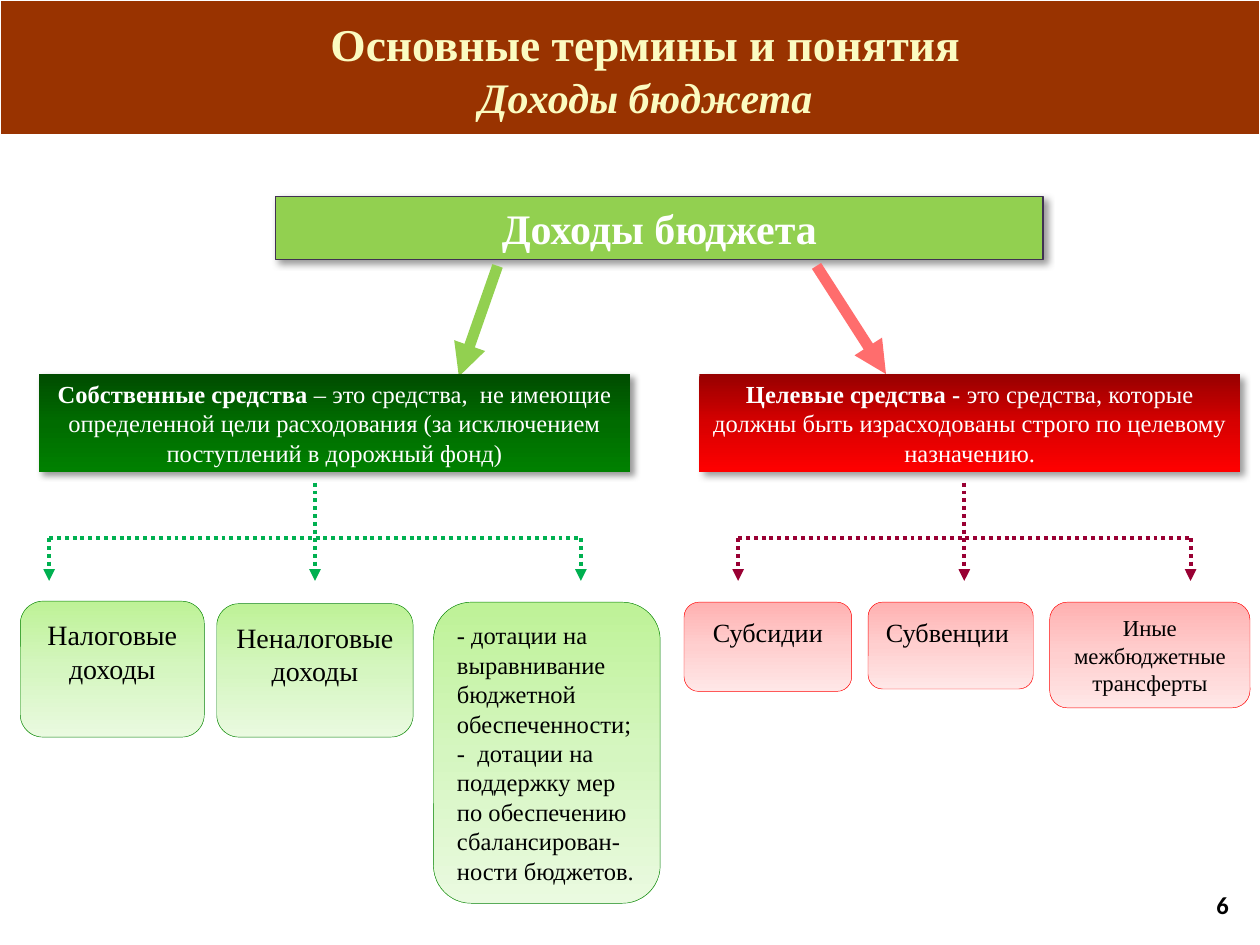
from copy import deepcopy
from pptx import Presentation
from pptx import util as u
from pptx.dml.color import RGBColor
from pptx.enum import dml, shapes, text
from pptx.oxml import ns
from pptx.oxml.xmlchemy import OxmlElement

HUE = {
    "band": "993300", "cream": "FBFBC1", "white": "FFFFFF", "black": "000000",
    "lime": "92D050", "edge": "403152", "coral": "FF6D6D",
}
OWN = {"bar": ("004C00", "006C00", "008000"), "card": ("BEF297", "D5F6C0", "EAFAE0"),
       "line": "008000", "fork": "00B050"}
AIM = {"bar": ("970000", "D70000", "FF0000"), "card": ("FFB1B1", "FFCFCF", "FFE7E7"),
       "line": "FF0000", "fork": "990033"}
KIND = shapes.MSO_SHAPE
MID, TOP = text.MSO_ANCHOR.MIDDLE, text.MSO_ANCHOR.TOP
LEFT, MID_X, RIGHT = text.PP_ALIGN.LEFT, text.PP_ALIGN.CENTER, text.PP_ALIGN.RIGHT


def rgb(code):
    return RGBColor.from_string(code)


def cm(*nums):
    return [u.Cm(n) for n in nums]


def node(home, tag, **attrs):
    item = OxmlElement(tag)
    for key, val in attrs.items():
        item.set(key, str(val))
    home.append(item)
    return item


def style(run, size, color, bold=False, italic=False, face="Times New Roman"):
    font = run.font
    font.name, font.size = face, u.Pt(size)
    font.bold, font.italic = bold, italic
    font.color.rgb = rgb(color)


def write(shape, words, size, color, bold=False, align=MID_X, anchor=MID,
          face="Times New Roman"):
    frame = shape.text_frame
    frame.word_wrap = True
    frame.vertical_anchor = anchor
    frame.text = words
    for para in frame.paragraphs:
        para.alignment = align
        for run in para.runs:
            style(run, size, color, bold, face=face)


def block(slide, kind, box, fill, line=None, width=0.25):
    shape = slide.shapes.add_shape(kind, *cm(*box))
    shape.shadow.inherit = False
    if isinstance(fill, str):
        shape.fill.solid()
        shape.fill.fore_color.rgb = rgb(fill)
    else:
        shape.fill.gradient()
        shape.fill.gradient_angle = 270
        stops = shape._element.spPr.find(".//" + ns.qn("a:gsLst"))
        stops.insert(1, deepcopy(stops[0]))
        for stop, pos, code in zip(shape.fill.gradient_stops, (0, 0.5, 1), fill):
            stop.position = pos
            stop.color.rgb = rgb(code)
    if line:
        shape.line.color.rgb = rgb(line)
        shape.line.width = u.Pt(width)
    else:
        shape.line.fill.background()
    return shape


def shade(shape):
    glow = shape._element.spPr.find(ns.qn("a:effectLst"))
    cast = node(glow, "a:outerShdw", blurRad=u.Pt(4), dist=u.Pt(3),
                dir=45 * 60000, algn="tl", rotWithShape=0)
    node(node(cast, "a:srgbClr", val=HUE["black"]), "a:alpha", val=40000)


def link(home, ends, color, width, dots=False, head=True):
    line = home.shapes.add_connector(shapes.MSO_CONNECTOR.STRAIGHT, *cm(*ends))
    line.line.color.rgb = rgb(color)
    line.line.width = u.Pt(width)
    if dots:
        line.line.dash_style = dml.MSO_LINE.ROUND_DOT
    if head:
        node(line.line._get_or_add_ln(), "a:tailEnd", type="triangle")
    node(line._element.spPr, "a:effectLst")


def header(slide, box):
    x, y, w, h = box
    band = block(slide, KIND.RECTANGLE, box, HUE["band"], HUE["white"], 0.75)
    slide.shapes._spTree.insert(2, band._element)
    title = slide.shapes.title
    title.left, title.top, title.width, title.height = cm(x + 2.31, y + 0.03, 21.41, h)
    write(title, "Основные термины и понятия\vДоходы бюджета", 26, HUE["cream"], True)
    style(title.text_frame.paragraphs[0].runs[1], 24, HUE["cream"], True, True)


def root(slide, box):
    x, y, w, h = box
    shape = block(slide, KIND.RECTANGLE, box, HUE["lime"], HUE["edge"], 0.75)
    shade(shape)
    write(shape, "Доходы бюджета", 24, HUE["white"], True)
    low = y + h + 0.13
    link(slide, (x + 4.47, low, x + 3.69, low + 2.23), HUE["lime"], 6.25)
    link(slide, (x + 10.9, low, x + 12.3, low + 2.18), HUE["coral"], 6.25)


def fork(slide, box, color):
    x, y, w, h = box
    group = slide.shapes.add_group_shape()
    mid, bend = x + w / 2, y + 1.12
    link(group, (x, bend, x + w, bend), color, 2.25, True, False)
    link(group, (mid, y, mid, bend), color, 2.25, True, False)
    for end in (x, mid, x + w):
        link(group, (end, bend, end, y + h), color, 2.25, True)


def branch(slide, spot, tone, bar, lead, rest, span, cards):
    x, y = spot
    shape = block(slide, KIND.FLOWCHART_PROCESS, (x + bar[0], y, bar[1], 1.98), tone["bar"])
    shade(shape)
    write(shape, lead, 14, HUE["white"], True)
    style(shape.text_frame.paragraphs[0].add_run(), 14, HUE["white"])
    shape.text_frame.paragraphs[0].runs[1].text = rest
    fork(slide, (x + span[0], y + 2.19, span[1], 1.98), tone["fork"])
    for (left, top, w, h), words, size, align, anchor in cards:
        card = block(slide, KIND.ROUNDED_RECTANGLE, (x + left, y + top, w, h),
                     tone["card"], tone["line"])
        write(card, words, size, HUE["black"], align=align, anchor=anchor)
        if anchor == TOP:
            card.text_frame.margin_top = u.Cm(0.2)


def number(slide, box):
    note = slide.shapes.add_textbox(*cm(*box))
    write(note, "6", 14, HUE["black"], True, RIGHT, face="Calibri")


def main():
    deck = Presentation()
    deck.slide_width, deck.slide_height = cm(25.4, 19.05)
    slide = deck.slides.add_slide(deck.slide_layouts[5])
    header(slide, (0, 0, 25.4, 2.72))
    root(slide, (5.56, 3.96, 15.47, 1.27))
    branch(
        slide, (0.41, 7.54), OWN, (0.38, 11.91), "Собственные средства ",
        "– это средства,  не имеющие определенной цели расходования "
        "(за исключением поступлений в дорожный фонд)",
        (0.58, 10.72),
        [((0, 4.58, 3.71, 2.74), "Налоговые доходы", 16, MID_X, TOP),
         ((3.96, 4.63, 3.96, 2.69), "Неналоговые доходы", 16, MID_X, TOP),
         ((8.33, 4.6, 4.57, 6.07),
          "- дотации на выравнивание  бюджетной  обеспеченности;\n"
          "-  дотации на поддержку мер по обеспечению сбалансирован-ности бюджетов.",
          14, LEFT, MID)])
    branch(
        slide, (13.79, 7.54), AIM, (0.31, 10.9), "Целевые средства - ",
        "это средства, которые должны быть израсходованы строго "
        "по целевому назначению.",
        (1.09, 9.12),
        [((0, 4.6, 3.38, 1.8), "Субсидии", 15, MID_X, TOP),
         ((3.71, 4.6, 3.33, 1.75), "Субвенции ", 15, MID_X, TOP),
         ((7.37, 4.6, 4.04, 2.13), "Иные межбюджетные трансферты", 13, MID_X, MID)])
    number(slide, (22.1, 17.73, 2.92, 1.02))
    deck.save("out.pptx")


if __name__ == "__main__":
    main()
